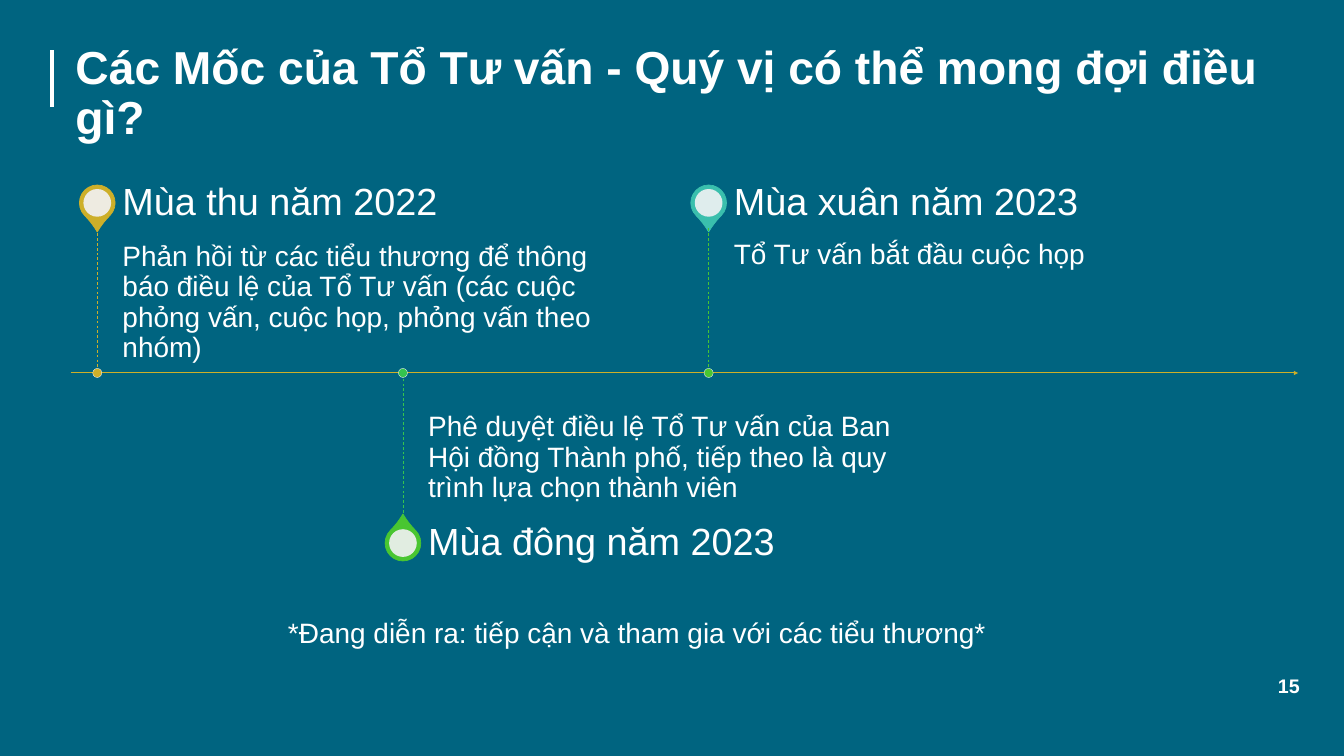
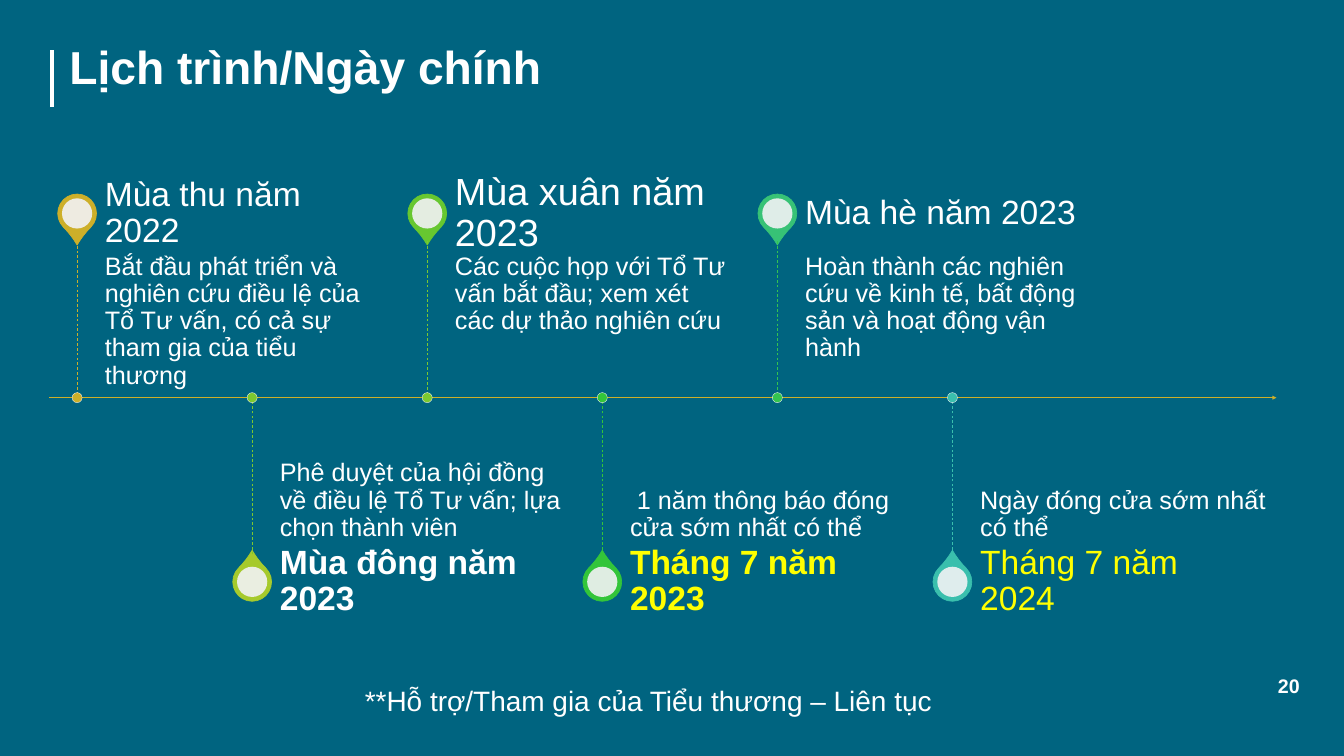
from lxml import etree
from pptx import Presentation
from pptx import util as u
from pptx.dml.color import RGBColor
from pptx.enum import dml, shapes, text
from pptx.oxml.ns import qn

FONT = "Arial"
TEAL, WHITE, PALE, GOLD, YELLOW = "006480", "FFFFFF", "F2F2F5", "CDAF29", "FFFF00"
TOP, MIDDLE, BOTTOM = (text.MSO_ANCHOR.TOP, text.MSO_ANCHOR.MIDDLE,
                       text.MSO_ANCHOR.BOTTOM)
CENTER, RIGHT = text.PP_ALIGN.CENTER, text.PP_ALIGN.RIGHT

SLIDES = [
    dict(
        title="Các Mốc của Tổ Tư vấn - Quý vị có thể mong đợi điều gì?",
        title_left=1.4, title_height=2.1, page="15",
        footnote="*Đang diễn ra: tiếp cận và tham gia với các tiểu thương*",
        footnote_box=(1.67, 12.16, 21.93, 0.77), footnote_align=CENTER,
        axis=(1.4, 25.76, 7.4), first=1.93, step=6.066,
        stem=2.87, head=1.01, pin=0.71, hole=0.55, dot=0.18,
        gap=0.5, width=10.11, near=0.28, far=0.42, head_inset=0.38, size=40,
        milestones=[
            dict(head="Mùa thu năm 2022", head_size=54, pin=GOLD, stem=GOLD,
                 body="Phản hồi từ các tiểu thương để thông báo điều lệ của Tổ Tư vấn "
                      "(các cuộc phỏng vấn, cuộc họp, phỏng vấn theo nhóm)"),
            dict(head="Mùa đông năm 2023", head_size=54, pin="49C631", stem="34C44E",
                 body="Phê duyệt điều lệ Tổ Tư vấn của Ban Hội đồng Thành phố, "
                      "tiếp theo là quy trình lựa chọn thành viên"),
            dict(head="Mùa xuân năm 2023", head_size=54, pin="3ABFAD", stem="49C631",
                 body="Tổ Tư vấn bắt đầu cuộc họp"),
        ],
    ),
    dict(
        title="Lịch trình/Ngày chính",
        title_left=1.28, title_height=1.11, page="20",
        footnote="**Hỗ trợ/Tham gia của Tiểu thương – Liên tục",
        footnote_box=(7.14, 13.52, 12.38, 0.77), footnote_align=None,
        axis=(0.98, 25.33, 7.89), first=1.53, step=3.474,
        stem=3.11, head=1.09, pin=0.77, hole=0.6, dot=0.2,
        gap=0.55, width=5.79, near=0.25, far=0.38, head_inset=0.33, size=36,
        milestones=[
            dict(head="Mùa thu năm 2022", head_size=48, pin=GOLD, stem=GOLD,
                 body="Bắt đầu phát triển và nghiên cứu điều lệ của Tổ Tư vấn, "
                      "có cả sự tham gia của tiểu thương"),
            dict(head="Mùa đông năm 2023", head_size=48, bold=True,
                 pin="A6CA2C", stem="7CC82F",
                 body="Phê duyệt của hội đồng về điều lệ Tổ Tư vấn; lựa chọn thành viên"),
            dict(head="Mùa xuân năm 2023", head_size=54, pin="67C730", stem="7CC82F",
                 body="Các cuộc họp với Tổ Tư vấn bắt đầu; xem xét các dự thảo nghiên cứu"),
            dict(head="Tháng 7 năm 2023", head_size=48, bold=True, color=YELLOW,
                 pin="33C53A", stem="33C53A",
                 body=" 1 năm thông báo đóng cửa sớm nhất có thể"),
            dict(head="Mùa hè năm 2023", head_size=48, pin="37C276", stem="34C44E",
                 body="Hoàn thành các nghiên cứu về kinh tế, bất động sản "
                      "và hoạt động vận hành"),
            dict(head="Tháng 7 năm 2024", head_size=48, color=YELLOW,
                 pin="3ABFAD", stem="3ABFAD",
                 body="Ngày đóng cửa sớm nhất có thể"),
        ],
    ),
]


def rgb(hex_color):
    return RGBColor.from_string(hex_color)


def add_text(slide, box, words, size, color=WHITE, bold=False, align=None,
             anchor=TOP, insets=(0.1, 0.05, 0.1, 0.05), spacing=None):
    frame = slide.shapes.add_textbox(*map(u.Inches, box)).text_frame
    frame.word_wrap = True
    frame.vertical_anchor = anchor
    (frame.margin_left, frame.margin_top,
     frame.margin_right, frame.margin_bottom) = map(u.Inches, insets)
    paragraph = frame.paragraphs[0]
    paragraph.alignment = align
    paragraph.line_spacing = spacing
    run = paragraph.add_run()
    run.text = words
    run.font.name = FONT
    run.font.size = u.Pt(size)
    run.font.bold = bold
    run.font.color.rgb = rgb(color)


def add_line(slide, start, end, color, width, dashed=False, arrow=False):
    line = slide.shapes.add_connector(shapes.MSO_CONNECTOR.STRAIGHT,
                                      *map(u.Inches, start + end))
    line.line.color.rgb = rgb(color)
    line.line.width = u.Pt(width)
    if dashed:
        line.line.dash_style = dml.MSO_LINE.DASH
    if arrow:
        etree.SubElement(line.line._get_or_add_ln(), qn("a:tailEnd"), type="triangle")
    etree.SubElement(line._element.spPr, qn("a:effectLst"))


def add_round(slide, kind, x, y, size, fill, outline=None, width=1):
    mark = slide.shapes.add_shape(kind, u.Inches(x - size / 2), u.Inches(y - size / 2),
                                  u.Inches(size), u.Inches(size))
    mark.shadow.inherit = False
    mark.fill.solid()
    mark.fill.fore_color.rgb = rgb(fill)
    if outline:
        mark.line.color.rgb = rgb(outline)
        mark.line.width = u.Pt(width)
    else:
        mark.line.fill.background()
    return mark


def add_milestone(slide, plan, index, stone):
    above = index % 2 == 0
    x = plan["first"] + index * plan["step"]
    axis_y = plan["axis"][2]
    side = -1 if above else 1
    stem_y = axis_y + side * plan["stem"]
    pin_y = stem_y + side * plan["head"] / 2
    left = x + plan["gap"]

    pin = add_round(slide, shapes.MSO_SHAPE.TEAR, x, pin_y, plan["pin"],
                    stone["pin"], stone["pin"])
    pin.adjustments[0] = 1.15
    pin.rotation = 135 if above else 315
    hole = add_round(slide, shapes.MSO_SHAPE.OVAL, x, pin_y, plan["hole"], PALE)
    tint = hole._element.spPr.find(qn("a:solidFill"))[0]
    etree.SubElement(tint, qn("a:alpha"), val="90000")

    near, far = plan["near"], plan["far"]
    add_text(slide, (left, min(axis_y, stem_y), plan["width"], plan["stem"]),
             stone["body"], plan["size"], spacing=0.9,
             anchor=TOP if above else BOTTOM,
             insets=(0, near, near, far) if above else (0, far, 0, near))
    add_text(slide, (left, pin_y - plan["head"] / 2, plan["width"], plan["head"]),
             stone["head"], stone["head_size"], stone.get("color", WHITE),
             stone.get("bold", False), anchor=MIDDLE, spacing=0.9,
             insets=(0, 0, plan["head_inset"], 0))
    add_line(slide, (x, stem_y), (x, axis_y), stone["stem"], 1, dashed=True)
    add_round(slide, shapes.MSO_SHAPE.OVAL, x, axis_y, plan["dot"],
              stone["stem"], PALE, 0.5)


def add_frame(slide, plan):
    slide.background.fill.solid()
    slide.background.fill.fore_color.rgb = rgb(TEAL)
    add_line(slide, (1.03, 1), (1.03, 2.13), WHITE, 5)
    left = plan["title_left"]
    add_text(slide, (left, 0.83, 25.34 - left, plan["title_height"]),
             plan["title"], 66, bold=True, spacing=0.9)
    add_text(slide, (23.36, 13.33, 2.53, 0.57), plan["page"], 28,
             bold=True, align=RIGHT)


def main():
    deck = Presentation()
    deck.slide_width, deck.slide_height = u.Inches(26.67), u.Inches(15)
    for plan in SLIDES:
        slide = deck.slides.add_slide(deck.slide_layouts[6])
        add_frame(slide, plan)
        start, end, axis_y = plan["axis"]
        add_line(slide, (start, axis_y), (end, axis_y), GOLD, 1.5, arrow=True)
        for index, stone in enumerate(plan["milestones"]):
            add_milestone(slide, plan, index, stone)
        add_text(slide, plan["footnote_box"], plan["footnote"], 40,
                 align=plan["footnote_align"])
    deck.save("out.pptx")


if __name__ == "__main__":
    main()
